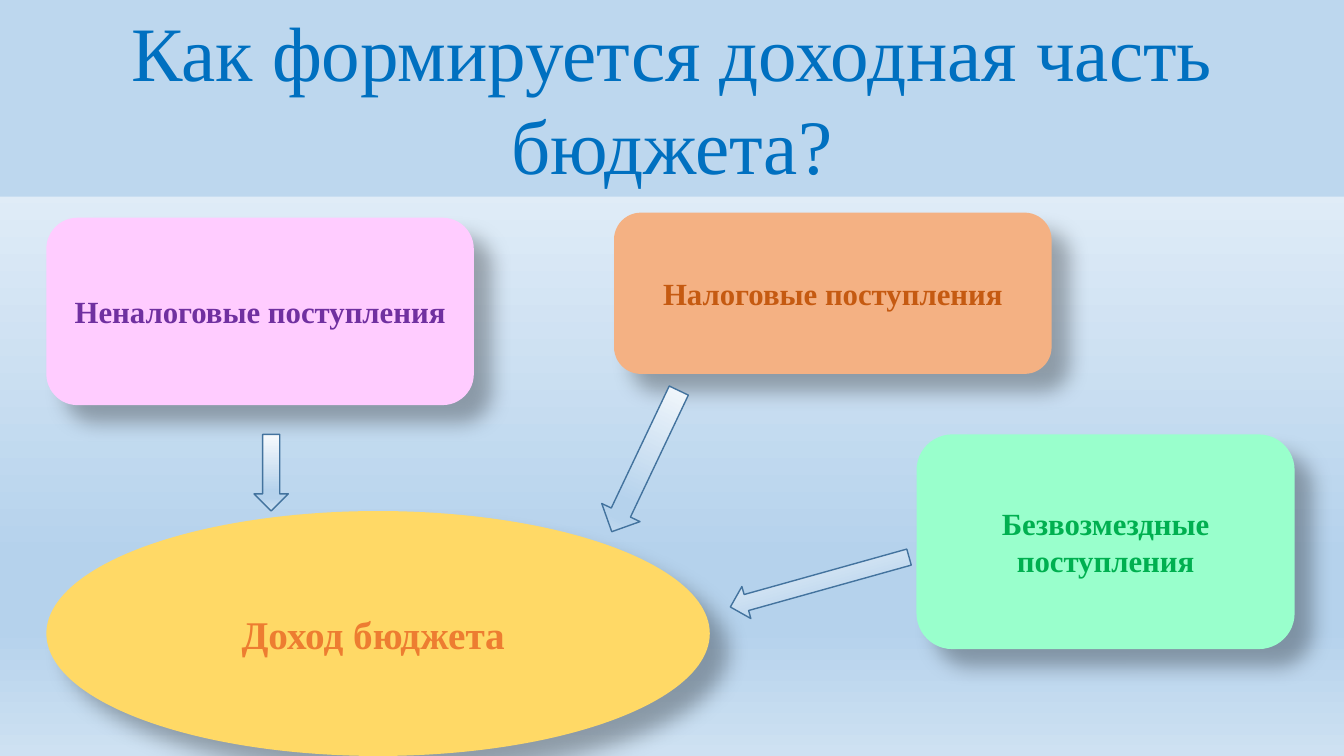
from dataclasses import dataclass

from lxml.etree import SubElement
from pptx import Presentation
from pptx.dml.color import RGBColor
from pptx.enum.shapes import MSO_SHAPE as Preset
from pptx.enum.text import MSO_ANCHOR as Anchor, MSO_AUTO_SIZE as AutoSize, PP_ALIGN as Align
from pptx.oxml.ns import qn
from pptx.util import Inches, Pt


@dataclass(frozen=True)
class Theme:
    font: str = "Times New Roman"
    title_size: int = 55
    result_size: int = 28
    source_size: int = 22
    title_fill: str = "BDD7EE"
    title_text: str = "0070C0"
    result_fill: str = "FFD966"
    result_text: str = "ED7D31"
    arrow_line: str = "43739E"
    shadow: str = "000000"
    gradient: tuple = ((0, "F7FAFD"), (74, "B5D2EC"), (83, "B5D2EC"), (100, "CEE1F2"))


THEME = Theme()

SOURCES = (
    ("Неналоговые поступления", (0.46, 2.16, 4.24, 1.86), "FFCCFF", "7030A0"),
    ("Налоговые поступления", (6.09, 2.11, 4.34, 1.6), "F4B183", "C55A11"),
    ("Безвозмездные поступления", (9.09, 4.31, 3.75, 2.13), "99FFCC", "00B050"),
)

ARROWS = (
    (Preset.DOWN_ARROW, (2.52, 4.31, 0.34, 0.76), 0),
    (Preset.DOWN_ARROW, (6.19, 3.8, 0.42, 1.55), 25.4),
    (Preset.LEFT_ARROW, (7.21, 5.61, 1.84, 0.33), 344.4),
)


def set_all(target, values):
    for name, value in values.items():
        setattr(target, name, value)


def fill_gradient(fill, element):
    fill.gradient()
    fill.gradient_angle = 270
    stops = next(element.iter(qn("a:gsLst")))
    for stop in list(stops):
        stops.remove(stop)
    for percent, color in THEME.gradient:
        stop = SubElement(stops, qn("a:gs"), pos=str(percent * 1000))
        SubElement(stop, qn("a:srgbClr"), val=color)


def add_shadow(shape):
    effects = shape._element.spPr.find(qn("a:effectLst"))
    shadow = SubElement(
        effects, qn("a:outerShdw"), blurRad=str(Pt(15)), dist=str(Pt(18)),
        dir=str(45 * 60000), algn="tl", rotWithShape="0",
    )
    color = SubElement(shadow, qn("a:srgbClr"), val=THEME.shadow)
    SubElement(color, qn("a:alpha"), val="30000")


def add_shape(page, preset, place):
    shape = page.shapes.add_shape(preset, *map(Inches, place))
    shape.shadow.inherit = False
    return shape


def add_box(page, preset, place, text, fill, color, size, bold=True):
    box = add_shape(page, preset, place)
    box.fill.solid()
    box.fill.fore_color.rgb = RGBColor.from_string(fill)
    box.line.fill.background()
    set_all(box.text_frame, {"word_wrap": True, "vertical_anchor": Anchor.MIDDLE})
    para = box.text_frame.paragraphs[0]
    para.alignment = Align.CENTER
    span = para.add_run()
    span.text = text
    set_all(span.font, {"name": THEME.font, "size": Pt(size), "bold": bold})
    span.font.color.rgb = RGBColor.from_string(color)
    return box


def add_title(page):
    title = add_box(page, Preset.RECTANGLE, (0, 0, 13.33, 1.95),
                    "Как формируется доходная часть бюджета?",
                    THEME.title_fill, THEME.title_text, THEME.title_size, bold=False)
    set_all(title.text_frame, {"vertical_anchor": Anchor.TOP,
                               "auto_size": AutoSize.SHAPE_TO_FIT_TEXT})


def add_arrow(page, preset, place, rotation):
    arrow = add_shape(page, preset, place)
    arrow.rotation = rotation
    fill_gradient(arrow.fill, arrow._element)
    arrow.line.width = Pt(1)
    arrow.line.color.rgb = RGBColor.from_string(THEME.arrow_line)


def main():
    deck = Presentation()
    set_all(deck, {"slide_width": Inches(13.33), "slide_height": Inches(7.5)})
    page = deck.slides.add_slide(deck.slide_layouts[6])
    fill_gradient(page.background.fill, page._element)
    add_title(page)
    result = add_box(page, Preset.OVAL, (0.46, 5.07, 6.58, 2.43), "Доход бюджета ",
                     THEME.result_fill, THEME.result_text, THEME.result_size)
    add_shadow(result)
    for text, place, fill, color in SOURCES:
        source = add_box(page, Preset.ROUNDED_RECTANGLE, place, text, fill, color,
                         THEME.source_size)
        add_shadow(source)
    for preset, place, rotation in ARROWS:
        add_arrow(page, preset, place, rotation)
    deck.save("out.pptx")


if __name__ == "__main__":
    main()
